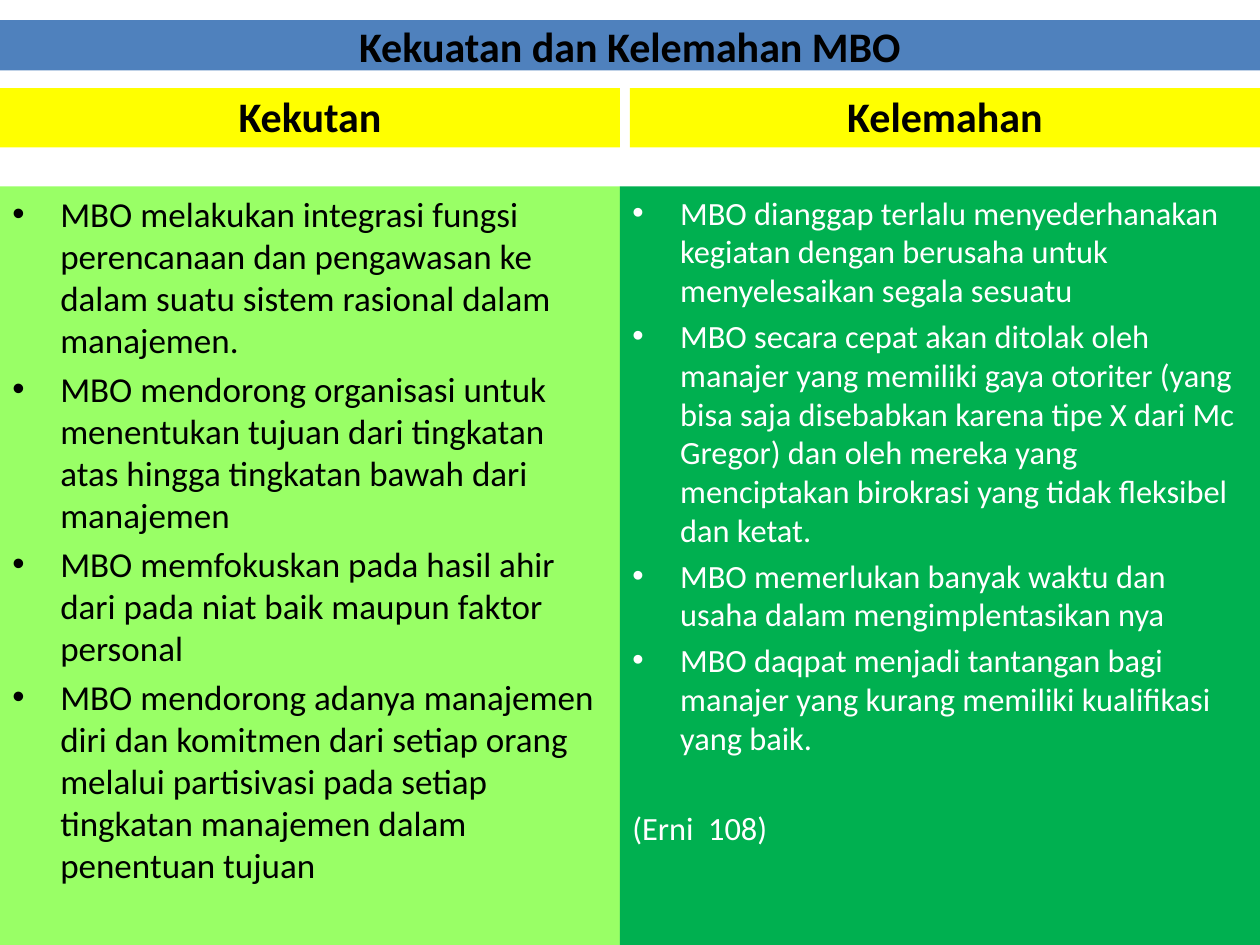
from dataclasses import dataclass

from lxml import etree
from pptx import Presentation
from pptx import util as u
from pptx.dml.color import RGBColor
from pptx.enum import shapes, text
from pptx.oxml.ns import qn

BLACK = RGBColor(0x00, 0x00, 0x00)
WHITE = RGBColor(0xFF, 0xFF, 0xFF)
BLUE = RGBColor(0x4F, 0x81, 0xBD)
YELLOW = RGBColor(0xFF, 0xFF, 0x00)
LIME = RGBColor(0x99, 0xFF, 0x66)
GREEN = RGBColor(0x00, 0xB0, 0x50)

FONT = "Calibri"
SLIDE_W, SLIDE_H = 10, 7.5
SPLIT = 4.92
TITLE_TOP, TITLE_H = 0.16, 0.4
HEADING_TOP, HEADING_H = 0.7, 0.47
BODY_TOP = 1.48
HEADING_SIZE = 24
INDENT = 0.38
SPACE_SHARE, LINE_SHARE = 0.2, 1.2


@dataclass(frozen=True)
class Column:
    heading: str
    heading_left: float
    left: float
    right: float
    fill: RGBColor
    ink: RGBColor
    size: float
    points: tuple[str, ...]
    source: str = ""


COLUMNS = (
    Column("Kekutan", 0, 0, SPLIT, LIME, BLACK, 20, (
        "MBO melakukan integrasi fungsi perencanaan dan pengawasan ke dalam "
        "suatu sistem rasional dalam manajemen.",
        "MBO mendorong organisasi untuk menentukan tujuan dari tingkatan atas "
        "hingga tingkatan bawah dari manajemen",
        "MBO memfokuskan pada hasil ahir dari pada niat baik maupun faktor personal",
        "MBO mendorong adanya manajemen diri dan komitmen dari setiap orang melalui "
        "partisivasi pada setiap tingkatan manajemen dalam penentuan tujuan",
    )),
    Column("Kelemahan", SLIDE_W / 2, SPLIT, SLIDE_W, GREEN, WHITE, 18.5, (
        "MBO dianggap terlalu menyederhanakan kegiatan dengan berusaha untuk "
        "menyelesaikan segala sesuatu",
        "MBO secara cepat akan ditolak oleh manajer yang memiliki gaya otoriter "
        "(yang bisa saja disebabkan karena tipe X dari Mc Gregor) dan oleh mereka "
        "yang menciptakan birokrasi yang tidak fleksibel dan ketat.",
        "MBO memerlukan banyak waktu dan usaha dalam mengimplentasikan nya",
        "MBO daqpat menjadi tantangan bagi manajer yang kurang memiliki "
        "kualifikasi yang baik.",
    ), "(Erni  108)"),
)


def add_panel(slide, left: float, top: float, right: float, bottom: float,
              fill: RGBColor, anchor):
    """Draw a borderless filled rectangle and return its text frame."""
    panel = slide.shapes.add_shape(
        shapes.MSO_SHAPE.RECTANGLE, u.Inches(left), u.Inches(top),
        u.Inches(right - left), u.Inches(bottom - top))
    panel.shadow.inherit = False
    panel.fill.solid()
    panel.fill.fore_color.rgb = fill
    panel.line.fill.background()
    frame = panel.text_frame
    frame.word_wrap = True
    frame.vertical_anchor = anchor
    return frame


def write(paragraph, words: str, size: float, ink: RGBColor, align,
          bold: bool = False) -> None:
    paragraph.alignment = align
    run = paragraph.add_run()
    run.text = words
    run.font.name = FONT
    run.font.size = u.Pt(size)
    run.font.bold = bold
    run.font.color.rgb = ink


def hang(paragraph, bullet: bool) -> None:
    """Give the paragraph a hanging indent, with or without a bullet."""
    props = paragraph._p.get_or_add_pPr()
    props.set("marL", str(u.Inches(INDENT)))
    props.set("indent", str(-u.Inches(INDENT)))
    if bullet:
        etree.SubElement(props, qn("a:buFont"), typeface="Arial")
        etree.SubElement(props, qn("a:buChar"), char="•")
    else:
        etree.SubElement(props, qn("a:buNone"))


def add_heading(slide, words: str, left: float, top: float, right: float,
                height: float, fill: RGBColor, anchor) -> None:
    frame = add_panel(slide, left, top, right, top + height, fill, anchor)
    write(frame.paragraphs[0], words, HEADING_SIZE, BLACK,
          text.PP_ALIGN.CENTER, bold=True)


def add_column(slide, column: Column) -> None:
    heading_right = column.heading_left + column.right - column.left
    add_heading(slide, column.heading, column.heading_left, HEADING_TOP,
                min(heading_right, SLIDE_W), HEADING_H, YELLOW,
                text.MSO_ANCHOR.BOTTOM)
    frame = add_panel(slide, column.left, BODY_TOP, column.right, SLIDE_H,
                      column.fill, text.MSO_ANCHOR.TOP)
    gap = column.size * SPACE_SHARE
    entries = [(point, gap, True) for point in column.points]
    if column.source:
        skipped_line = column.size * LINE_SHARE + gap
        entries.append((column.source, skipped_line + gap, False))
    for index, (words, space, bullet) in enumerate(entries):
        paragraph = frame.add_paragraph() if index else frame.paragraphs[0]
        paragraph.space_before = u.Pt(space)
        write(paragraph, words, column.size, column.ink, text.PP_ALIGN.LEFT)
        hang(paragraph, bullet)


def main() -> None:
    deck = Presentation()
    deck.slide_width, deck.slide_height = u.Inches(SLIDE_W), u.Inches(SLIDE_H)
    slide = deck.slides.add_slide(deck.slide_layouts[6])
    add_heading(slide, "Kekuatan dan Kelemahan MBO", 0, TITLE_TOP, SLIDE_W,
                TITLE_H, BLUE, text.MSO_ANCHOR.MIDDLE)
    for column in COLUMNS:
        add_column(slide, column)
    deck.save("out.pptx")


if __name__ == "__main__":
    main()
